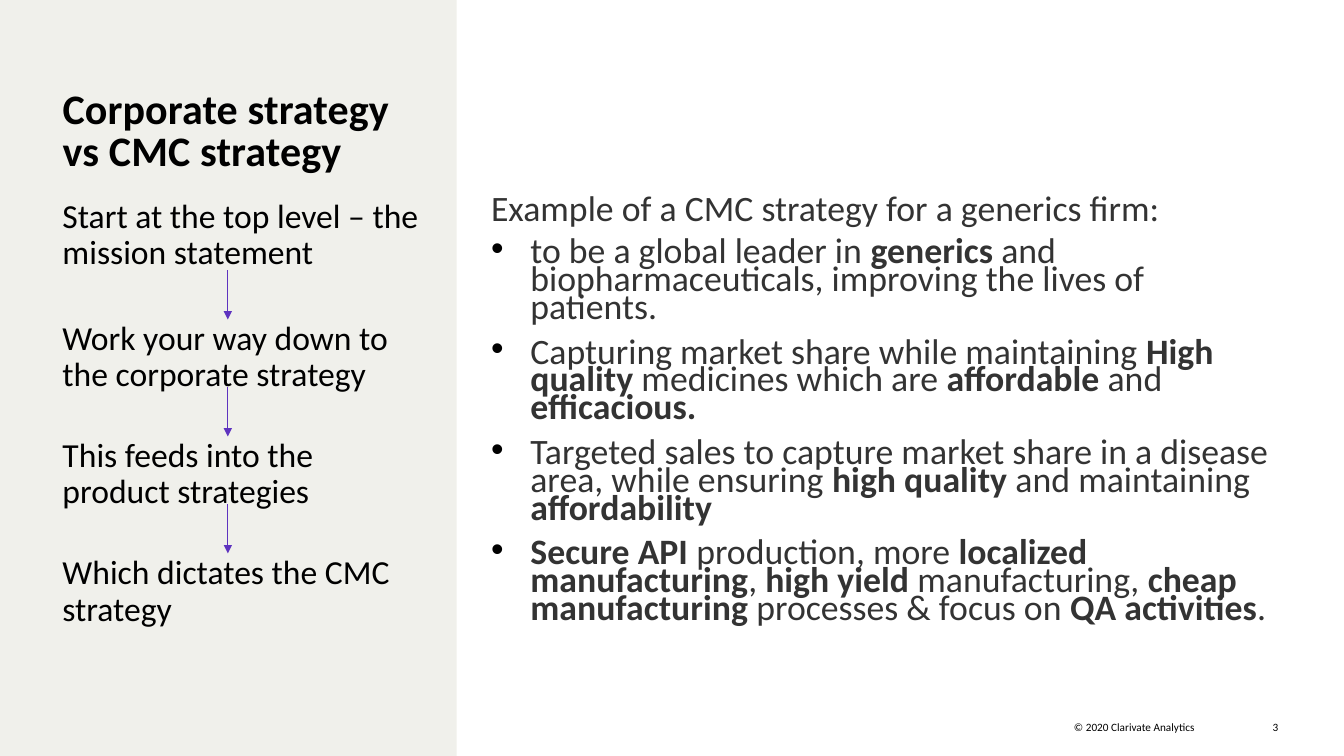
from dataclasses import dataclass

from lxml import etree
from pptx import Presentation
from pptx.dml.color import RGBColor as RGB
from pptx.enum.shapes import MSO_CONNECTOR as Connector, MSO_SHAPE as Shape
from pptx.enum.text import MSO_ANCHOR as Anchor, MSO_AUTO_SIZE as AutoSize, PP_ALIGN as Align
from pptx.oxml.ns import qn
from pptx.util import Inches, Pt

# Content; ** switches bold on and off
TITLE = "Corporate strategy vs CMC strategy"
STEPS = [
    "Start at the top level – the mission statement",
    "Work your way down to the corporate strategy",
    "This feeds into the product strategies",
    "Which dictates the CMC strategy",
]
EXAMPLE_INTRO = "Example of a CMC strategy for a generics firm:"
EXAMPLE_POINTS = [
    "to be a global leader in **generics** and biopharmaceuticals, "
    "improving the lives of patients.",
    "Capturing market share while maintaining **High quality** medicines "
    "which are **affordable **and** efficacious.**",
    "Targeted sales to capture market share in a disease area, "
    "while ensuring **high quality **and maintaining **affordability**",
    "**Secure API** production, more **localized manufacturing**, **high yield** "
    "manufacturing, **cheap manufacturing** processes & focus on **QA activities**.",
]
COPYRIGHT = "© 2020 Clarivate Analytics"
PAGE_NUMBER = "3"


@dataclass(frozen=True)
class Theme:
    font: str = "Calibri"
    panel: RGB = RGB.from_string("F0F0EB")
    ink: RGB = RGB.from_string("000000")
    body: RGB = RGB.from_string("333333")
    arrow: RGB = RGB.from_string("5E33BF")
    title_size: float = 30
    step_size: float = 24
    example_size: float = 25.5
    footer_size: float = 8


THEME = Theme()

# Layout in inches: left, top, width, height
PANEL = (0, 0, 4.53, 7.5)
TITLE_BOX = (0.62, 0.89, 3.57, 0.43)
STEPS_BOX = (0.62, 1.98, 3.57, 4.97)
EXAMPLE_BOX = (4.87, 1.98, 7.81, 4.97)
COPYRIGHT_BOX = (7.35, 7.15, 4.5, 0.2)
PAGE_BOX = (12.36, 7.15, 0.32, 0.18)
ARROW_X, ARROW_TOP, ARROW_LENGTH, ARROW_PITCH = 2.26, 2.68, 0.49, 1.16
INDENT = 0.39
STEP_GAPS = [35, 32, 32, 0]


def inches(box):
    return [Inches(length) for length in box]


def prepare(frame):
    frame.margin_left = frame.margin_top = frame.margin_right = frame.margin_bottom = 0
    frame.auto_size = AutoSize.NONE
    frame.word_wrap = True
    frame.vertical_anchor = Anchor.TOP


def write(frame, texts):
    """Fill a frame with one paragraph per text and return the paragraphs."""
    prepare(frame)
    frame.text = "\n".join(texts)
    return frame.paragraphs


def style(run, size, color, bold=False):
    run.font.name = THEME.font
    run.font.size = Pt(size)
    run.font.bold = bold
    run.font.color.rgb = color


def add_text(slide, box, texts):
    return write(slide.shapes.add_textbox(*inches(box)).text_frame, texts)


def add_bullet(paragraph):
    props = paragraph._p.get_or_add_pPr()
    props.set("marL", str(Inches(INDENT)))
    props.set("indent", str(-Inches(INDENT)))
    color = etree.SubElement(props, qn("a:buClr"))
    etree.SubElement(color, qn("a:srgbClr")).set("val", str(THEME.ink))
    etree.SubElement(props, qn("a:buFont")).set("typeface", "Arial")
    etree.SubElement(props, qn("a:buChar")).set("char", "•")


def add_arrow(slide, x, top, length):
    arrow = slide.shapes.add_connector(
        Connector.STRAIGHT, *inches((x, top, x, top + length)))
    arrow.line.color.rgb = THEME.arrow
    arrow.line.width = Pt(0.5)
    etree.SubElement(arrow.line._get_or_add_ln(), qn("a:tailEnd")).set("type", "triangle")
    etree.SubElement(arrow._element.spPr, qn("a:effectLst"))


def main():
    deck = Presentation()
    deck.slide_width, deck.slide_height = Inches(13.33), Inches(7.5)
    slide = deck.slides.add_slide(deck.slide_layouts[5])

    # Side panel, kept behind the title
    panel = slide.shapes.add_shape(Shape.RECTANGLE, *inches(PANEL))
    panel.shadow.inherit = False
    panel.fill.solid()
    panel.fill.fore_color.rgb = THEME.panel
    panel.line.fill.background()
    slide.shapes._spTree.insert(2, panel._element)

    # Title
    title = slide.shapes.title
    title.left, title.top, title.width, title.height = inches(TITLE_BOX)
    heading = write(title.text_frame, [TITLE])[0]
    heading.alignment = Align.LEFT
    heading.line_spacing = 0.85
    style(heading.runs[0], THEME.title_size, THEME.ink, bold=True)
    heading.runs[0].font._element.set("spc", "10")

    # Steps from mission to CMC strategy
    for step, gap in zip(add_text(slide, STEPS_BOX, STEPS), STEP_GAPS):
        step.line_spacing = 0.9
        step.space_after = Pt(gap)
        style(step.runs[0], THEME.step_size, THEME.ink)
    for index in range(len(STEPS) - 1):
        add_arrow(slide, ARROW_X, ARROW_TOP + index * ARROW_PITCH, ARROW_LENGTH)

    # Example strategy
    intro, *points = add_text(slide, EXAMPLE_BOX, [EXAMPLE_INTRO] + [""] * len(EXAMPLE_POINTS))
    intro.line_spacing = 0.65
    intro.space_after = Pt(4)
    style(intro.runs[0], THEME.example_size, THEME.body)
    for point, marked in zip(points, EXAMPLE_POINTS):
        point.line_spacing = 0.65
        point.space_before = point.space_after = Pt(6)
        add_bullet(point)
        for part, words in enumerate(marked.split("**")):
            if words:
                run = point.add_run()
                run.text = words
                style(run, THEME.example_size, THEME.body, bold=part % 2 == 1)

    # Footer
    for box, words in ((COPYRIGHT_BOX, COPYRIGHT), (PAGE_BOX, PAGE_NUMBER)):
        footer = add_text(slide, box, [words])[0]
        footer.alignment = Align.RIGHT
        style(footer.runs[0], THEME.footer_size, THEME.ink)

    deck.save("out.pptx")


if __name__ == "__main__":
    main()
